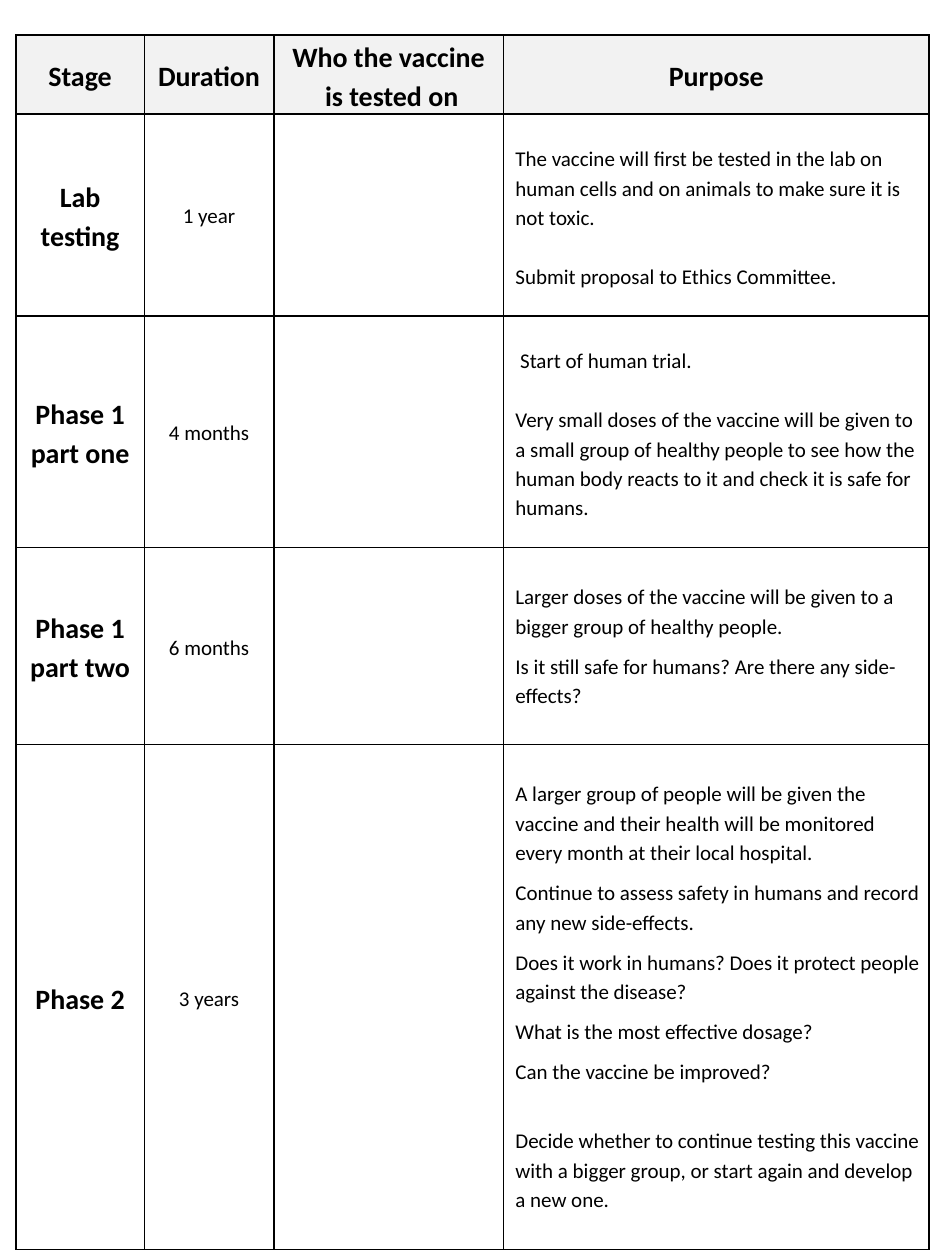
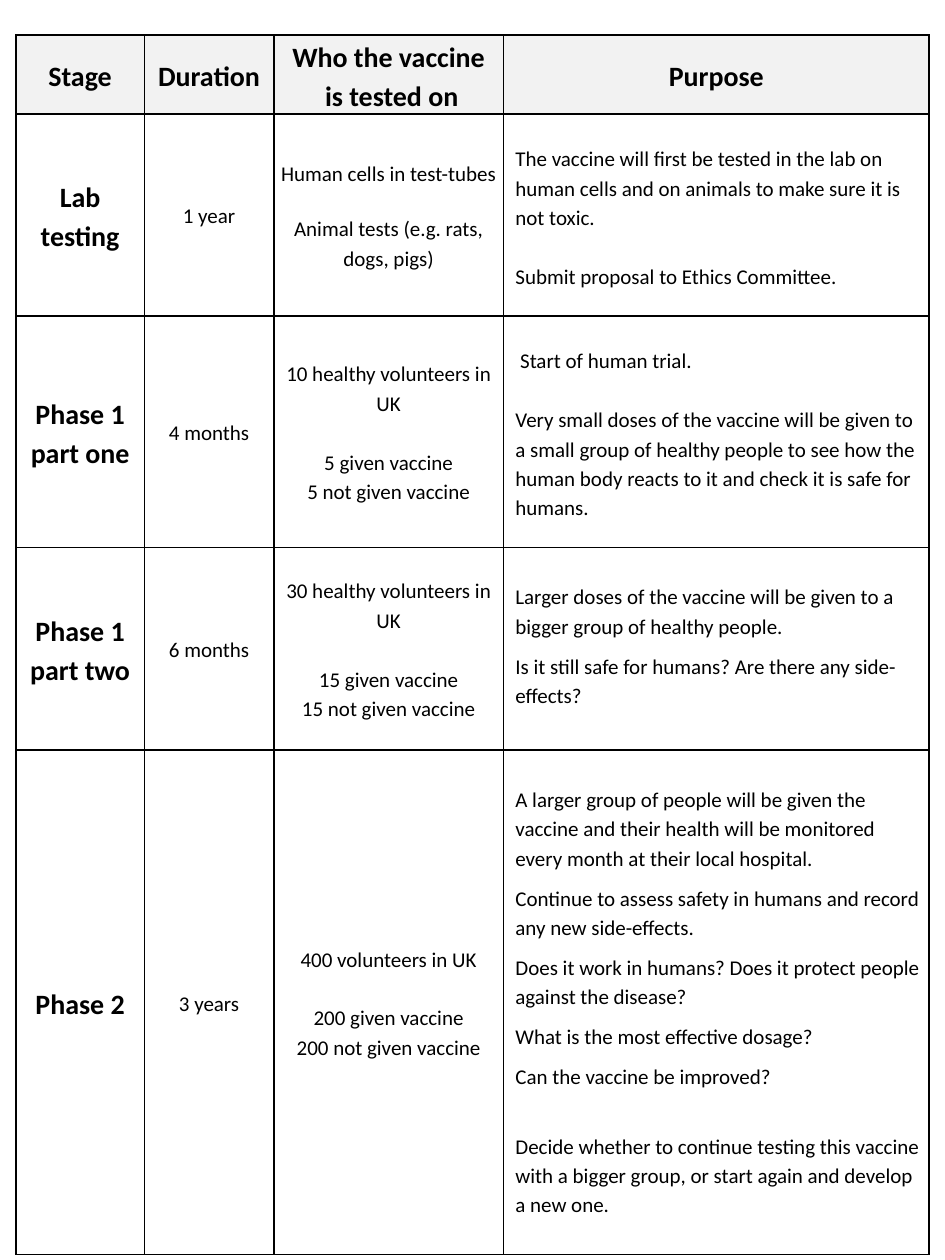
from pptx import Presentation
from pptx.dml.color import RGBColor
from pptx.enum.text import MSO_ANCHOR, PP_ALIGN
from pptx.oxml.ns import qn
from pptx.util import Cm, Pt
from lxml import etree

BLACK = RGBColor(0x00, 0x00, 0x00)
HEADER_GREY = RGBColor(0xF2, 0xF2, 0xF2)
CENTER, LEFT = PP_ALIGN.CENTER, PP_ALIGN.LEFT
MIDDLE, TOP = MSO_ANCHOR.MIDDLE, MSO_ANCHOR.TOP

LINE_GAP = 16.8
SMALL_GAP = 6

COLUMN_WIDTHS = [2.59, 2.61, 4.63, 8.58]
HEADINGS = ["Stage", "Duration", "Who the vaccine\n is tested on", "Purpose"]
STAGES = ["Lab testing", "Phase 1\npart one", "Phase 1\npart two", "Phase 2"]
DURATIONS = ["1 year", "4 months", "6 months", "3 years"]

TESTED_ON = [
    [("Human cells in test-tubes", 0),
     ("Animal tests (e.g. rats, dogs, pigs)", 14.5)],
    [("10 healthy volunteers in UK", 0),
     ("5 given vaccine", LINE_GAP),
     ("5 not given vaccine", 0)],
    [("30 healthy volunteers in UK", 0),
     ("15 given vaccine\n15 not given vaccine", LINE_GAP)],
    [("400 volunteers in UK", 0),
     ("200 given vaccine\n200 not given vaccine", LINE_GAP)],
]

PURPOSES = [
    [("The vaccine will first be tested in the lab on human cells and on "
      "animals to make sure it is not toxic.", 0),
     ("Submit proposal to Ethics Committee.", LINE_GAP)],
    [(" Start of human trial.", 0),
     ("Very small doses of the vaccine will be given to a small group of "
      "healthy people to see how the human body reacts to it and check it "
      "is safe for humans.", LINE_GAP)],
    [("Larger doses of the vaccine will be given to a bigger group of "
      "healthy people.", 0),
     ("Is it still safe for humans? Are there any side-effects?", SMALL_GAP)],
    [("A larger group of people will be given the vaccine and their health "
      "will be monitored every month at their local hospital.", 0),
     ("Continue to assess safety in humans and record any new "
      "side-effects.", SMALL_GAP),
     ("Does it work in humans? Does it protect people against the "
      "disease?", SMALL_GAP),
     ("What is the most effective dosage?", SMALL_GAP),
     ("Can the vaccine be improved?", SMALL_GAP),
     ("Decide whether to continue testing this vaccine with a bigger group, "
      "or start again and develop a new one.", LINE_GAP + SMALL_GAP)],
]
PURPOSE_TOP_MARGINS = [0.59, 0.59, 0.68, 0.68]


class TrialDeck:
    font_name = "Calibri"
    heading_size = 16
    body_size = 12
    line_spacing = 1.15
    side_margin = 0.05
    purpose_margin = 0.24
    border_width = 1

    def __init__(self):
        self.presentation = Presentation()
        self.presentation.slide_width = Cm(19.05)
        self.presentation.slide_height = Cm(25.4)
        self.slide = None

    def add_slide(self):
        blank_layout = self.presentation.slide_layouts[6]
        self.slide = self.presentation.slides.add_slide(blank_layout)

    def add_table(self, left, top, widths, heights):
        shape = self.slide.shapes.add_table(
            len(heights), len(widths), Cm(left), Cm(top),
            Cm(sum(widths)), Cm(sum(heights)))
        table = shape.table
        table.first_row = False
        table.horz_banding = False
        for column, width in zip(table.columns, widths):
            column.width = Cm(width)
        for row, height in zip(table.rows, heights):
            row.height = Cm(height)
        for cell in table.iter_cells():
            self.add_borders(cell)
            cell.fill.background()
            cell.margin_left = cell.margin_right = Cm(self.side_margin)
            cell.margin_top = cell.margin_bottom = 0
        return table

    def add_borders(self, cell):
        properties = cell._tc.get_or_add_tcPr()
        for side in ("a:lnL", "a:lnR", "a:lnT", "a:lnB"):
            line = etree.SubElement(properties, qn(side))
            line.set("w", str(Pt(self.border_width)))
            fill = etree.SubElement(line, qn("a:solidFill"))
            etree.SubElement(fill, qn("a:srgbClr")).set("val", str(BLACK))

    def fill_cell(self, cell, paragraphs, size, bold=False, align=CENTER, anchor=MIDDLE):
        cell.vertical_anchor = anchor
        frame = cell.text_frame
        for index, (text, gap) in enumerate(paragraphs):
            paragraph = frame.add_paragraph() if index else frame.paragraphs[0]
            paragraph.alignment = align
            paragraph.line_spacing = self.line_spacing
            paragraph.space_before = Pt(gap)
            for number, line in enumerate(text.split("\n")):
                if number:
                    paragraph.add_line_break()
                self.add_run(paragraph, line, size, bold)

    def add_run(self, paragraph, text, size, bold):
        run = paragraph.add_run()
        run.text = text
        run.font.name = self.font_name
        run.font.size = Pt(size)
        run.font.bold = bold
        run.font.color.rgb = BLACK

    def fill_heading(self, cell, text):
        self.fill_cell(cell, [(text, 0)], self.heading_size, bold=True)

    def fill_purpose(self, cell, paragraphs, top_margin):
        cell.margin_left = Cm(self.purpose_margin)
        cell.margin_top = Cm(top_margin)
        self.fill_cell(cell, paragraphs, self.body_size, align=LEFT, anchor=TOP)

    def add_trial_table(self, heights, tested_on):
        table = self.add_table(0.32, 0.71, COLUMN_WIDTHS, heights)
        for column, heading in enumerate(HEADINGS):
            cell = table.cell(0, column)
            cell.fill.solid()
            cell.fill.fore_color.rgb = HEADER_GREY
            self.fill_heading(cell, heading)
        for index, stage in enumerate(STAGES):
            row = index + 1
            self.fill_heading(table.cell(row, 0), stage)
            self.fill_cell(table.cell(row, 1), [(DURATIONS[index], 0)], self.body_size)
            self.fill_cell(table.cell(row, 2), tested_on[index], self.body_size)
            self.fill_purpose(table.cell(row, 3), PURPOSES[index],
                              PURPOSE_TOP_MARGINS[index])


def main():
    deck = TrialDeck()
    deck.add_slide()
    deck.add_trial_table([1.58, 4.07, 4.67, 3.97, 10.18], [[]] * len(STAGES))
    deck.add_slide()
    deck.add_trial_table([1.58, 4.07, 4.67, 4.08, 10.17], TESTED_ON)
    deck.presentation.save("out.pptx")


if __name__ == "__main__":
    main()
